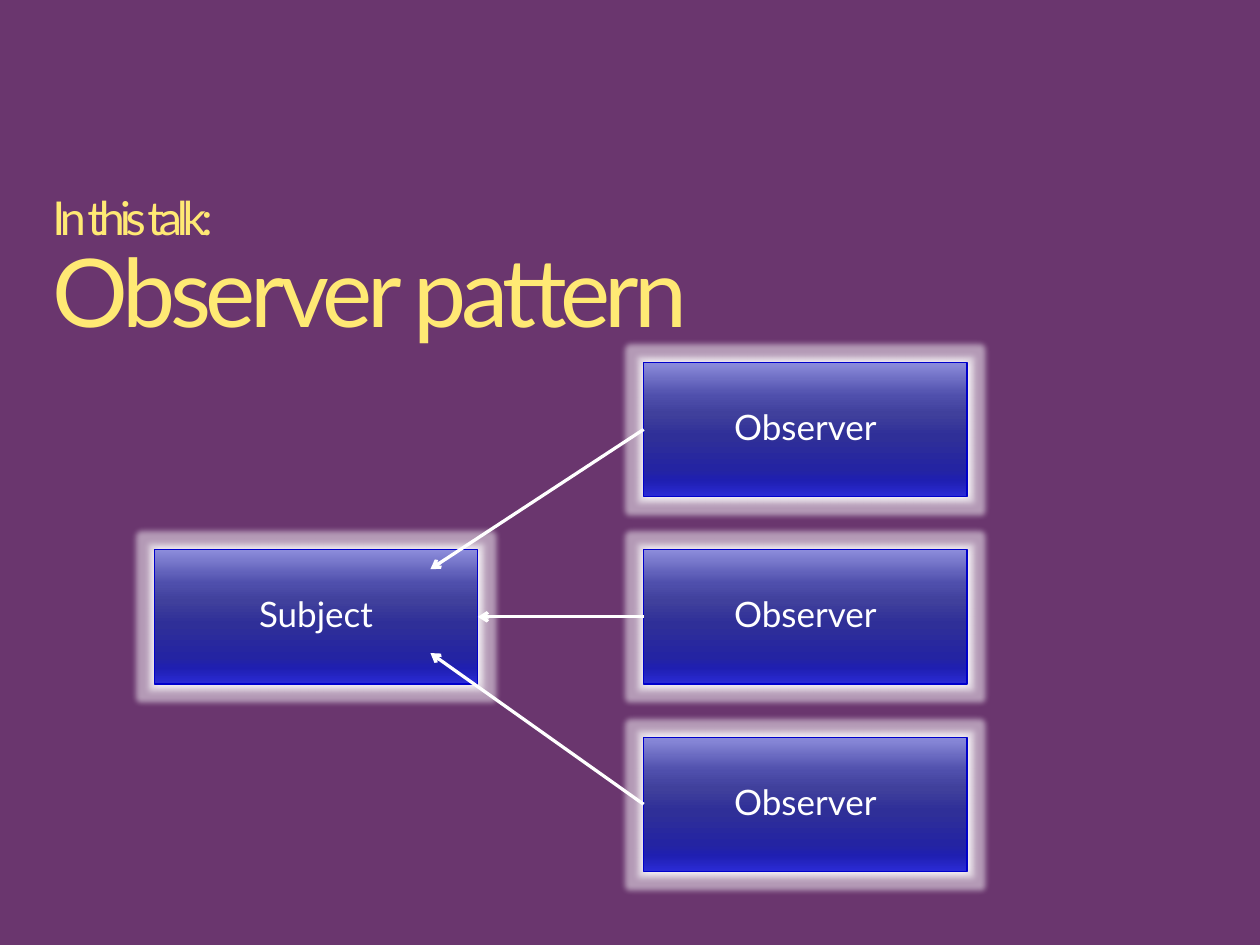
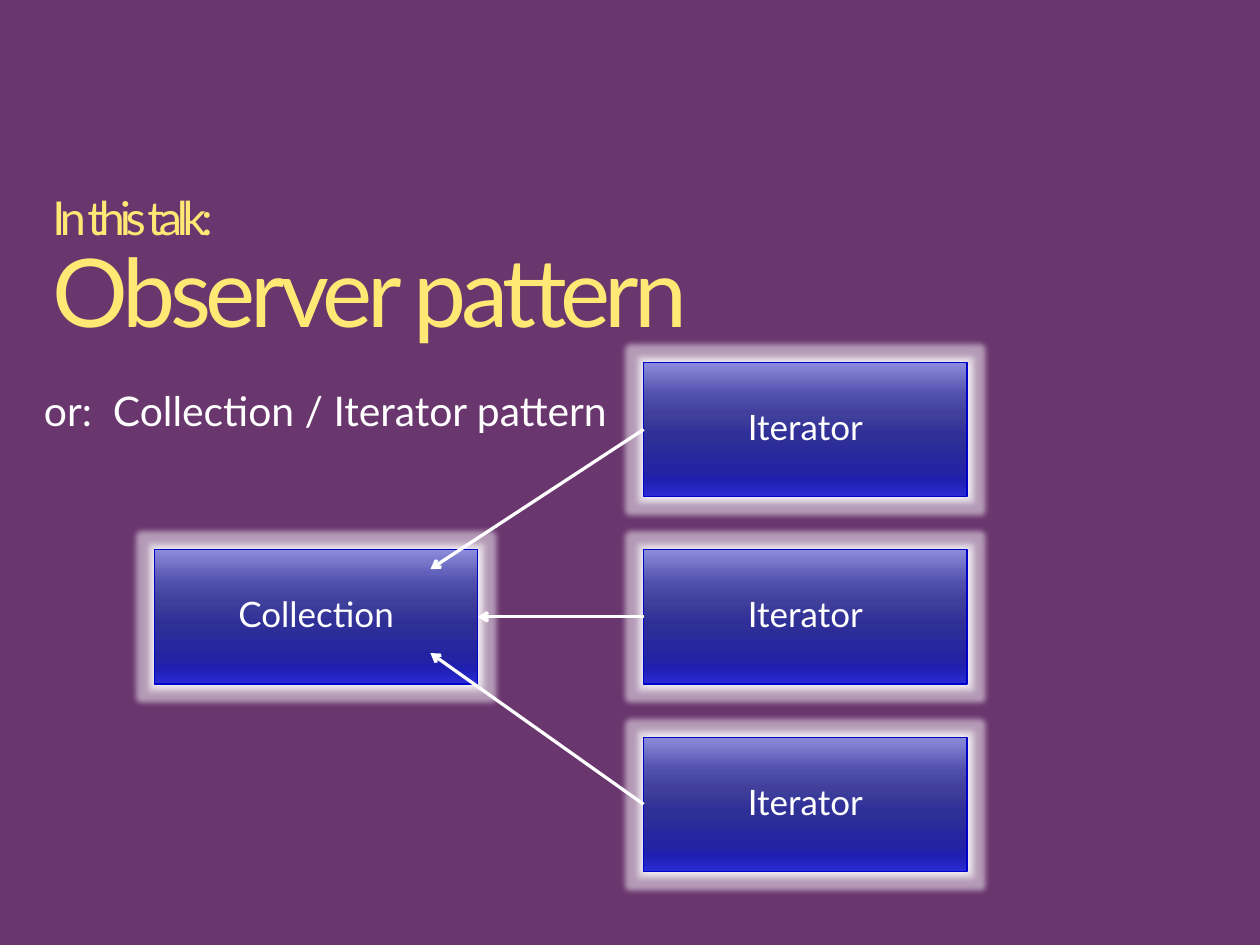
from lxml import etree
from pptx import Presentation
from pptx.dml.color import RGBColor
from pptx.enum.shapes import MSO_CONNECTOR as Connector, MSO_SHAPE as Shape
from pptx.enum.text import MSO_ANCHOR as Anchor, PP_ALIGN as Align
from pptx.oxml import parse_xml
from pptx.oxml.ns import nsdecls, qn
from pptx.util import Inches, Pt

FONT = "Lato"
COLORS = {
    "background": "6A366E",
    "title": "FFE974",
    "text": "FFFFFF",
    "arrow": "FFFFFF",
    "glow": "FFFFFF",
    "border": "0000CB",
}
BOX_GRADIENT = [(0, "8C8CDB"), (25, "4F4FAC"), (38, "40409C"), (55, "2F2F98"),
                (80, "2424A2"), (88, "1F1FB1"), (100, "2B2BD6")]

TITLE = [("In this talk:", 32), ("Observer pattern", 65)]
SLIDES = [
    {"source": "Subject", "client": "Observer", "note": None},
    {"source": "Collection", "client": "Iterator",
     "note": "or:  Collection / Iterator pattern"},
]

BOX_WIDTH, BOX_HEIGHT = 3.08, 1.28
SOURCE_LEFT, CLIENT_LEFT = 1.47, 6.13
FIRST_TOP, LAST_TOP = 3.45, 7.02
ROW_STEP = (LAST_TOP - FIRST_TOP) / 2
SOURCE_TOP = FIRST_TOP + ROW_STEP
LEFT_SITE = 1
# Arrow tips, one for each client from top to bottom
ARROW_TIPS = [(4.1, 5.42), (SOURCE_LEFT + BOX_WIDTH, SOURCE_TOP + BOX_HEIGHT / 2), (4.1, 6.22)]


def rgb(name):
    return RGBColor.from_string(COLORS[name])


def style_font(font, size, color):
    font.name = FONT
    font.size = Pt(size)
    font.color.rgb = rgb(color)


def set_margins(frame, horizontal, vertical):
    frame.margin_left = frame.margin_right = Inches(horizontal)
    frame.margin_top = frame.margin_bottom = Inches(vertical)


def add_title(page):
    frame = page.shapes.add_textbox(Inches(0.5), Inches(1.86), Inches(11), Inches(1.47)).text_frame
    frame.word_wrap = True
    set_margins(frame, 0, 0)
    para = frame.paragraphs[0]
    para.line_spacing = 0.9
    para.text = "\v".join(text for text, size in TITLE)
    for span, (text, size) in zip(para.runs, TITLE):
        style_font(span.font, size, "title")
        span.font._element.set("spc", "-360")


def fill_gradient(shape):
    """Fill the shape from top to bottom with the stops of BOX_GRADIENT."""
    shape.fill.gradient()
    shape.fill.gradient_angle = 270
    stops = shape._element.spPr.find(".//" + qn("a:gsLst"))
    for stop in list(stops):
        stops.remove(stop)
    for percent, color in BOX_GRADIENT:
        stop = etree.SubElement(stops, qn("a:gs"), pos=str(percent * 1000))
        etree.SubElement(stop, qn("a:srgbClr"), val=color)


def add_glow(shape):
    """Surround the shape with a wide pale glow and a narrow bright rim."""
    color = COLORS["glow"]
    shape._element.spPr.append(parse_xml(
        f'<a:effectLst {nsdecls("a")}>'
        f'<a:glow rad="101600"><a:srgbClr val="{color}"><a:alpha val="50000"/></a:srgbClr></a:glow>'
        f'<a:outerShdw blurRad="63500" dist="0" dir="0" rotWithShape="0">'
        f'<a:srgbClr val="{color}"/></a:outerShdw></a:effectLst>'))


def add_box(page, left, top, label):
    box = page.shapes.add_shape(Shape.RECTANGLE, Inches(left), Inches(top),
                                Inches(BOX_WIDTH), Inches(BOX_HEIGHT))
    fill_gradient(box)
    box.line.color.rgb = rgb("border")
    box.line.width = Pt(0.75)
    add_glow(box)
    frame = box.text_frame
    frame.word_wrap = True
    frame.vertical_anchor = Anchor.MIDDLE
    set_margins(frame, 0.12, 0.06)
    para = frame.paragraphs[0]
    para.text = label
    para.alignment = Align.CENTER
    para.line_spacing = 0.85
    style_font(para.runs[0].font, 24, "text")
    return box


def add_arrow(page, client, tip):
    x, y = (Inches(value) for value in tip)
    arrow = page.shapes.add_connector(Connector.STRAIGHT, x, y, x, y)
    arrow.begin_connect(client, LEFT_SITE)
    arrow.line.color.rgb = rgb("arrow")
    arrow.line.width = Pt(2.25)
    etree.SubElement(arrow.line._get_or_add_ln(), qn("a:tailEnd"), type="arrow")
    etree.SubElement(arrow._element.spPr, qn("a:effectLst"))


def add_note(page, text):
    frame = page.shapes.add_textbox(Inches(0.32), Inches(3.62), Inches(5.65), Inches(0.57)).text_frame
    frame.word_wrap = True
    frame.text = text
    style_font(frame.paragraphs[0].runs[0].font, 28, "text")


def add_pattern_slide(deck, content):
    page = deck.slides.add_slide(deck.slide_layouts[6])
    page.background.fill.solid()
    page.background.fill.fore_color.rgb = rgb("background")
    add_title(page)
    add_box(page, SOURCE_LEFT, SOURCE_TOP, content["source"])
    clients = [add_box(page, CLIENT_LEFT, FIRST_TOP + row * ROW_STEP, content["client"])
               for row in range(len(ARROW_TIPS))]
    for client, tip in zip(clients, ARROW_TIPS):
        add_arrow(page, client, tip)
    if content["note"]:
        add_note(page, content["note"])


def main():
    deck = Presentation()
    deck.slide_width, deck.slide_height = Inches(12), Inches(9)
    for content in SLIDES:
        add_pattern_slide(deck, content)
    deck.save("out.pptx")


if __name__ == "__main__":
    main()
